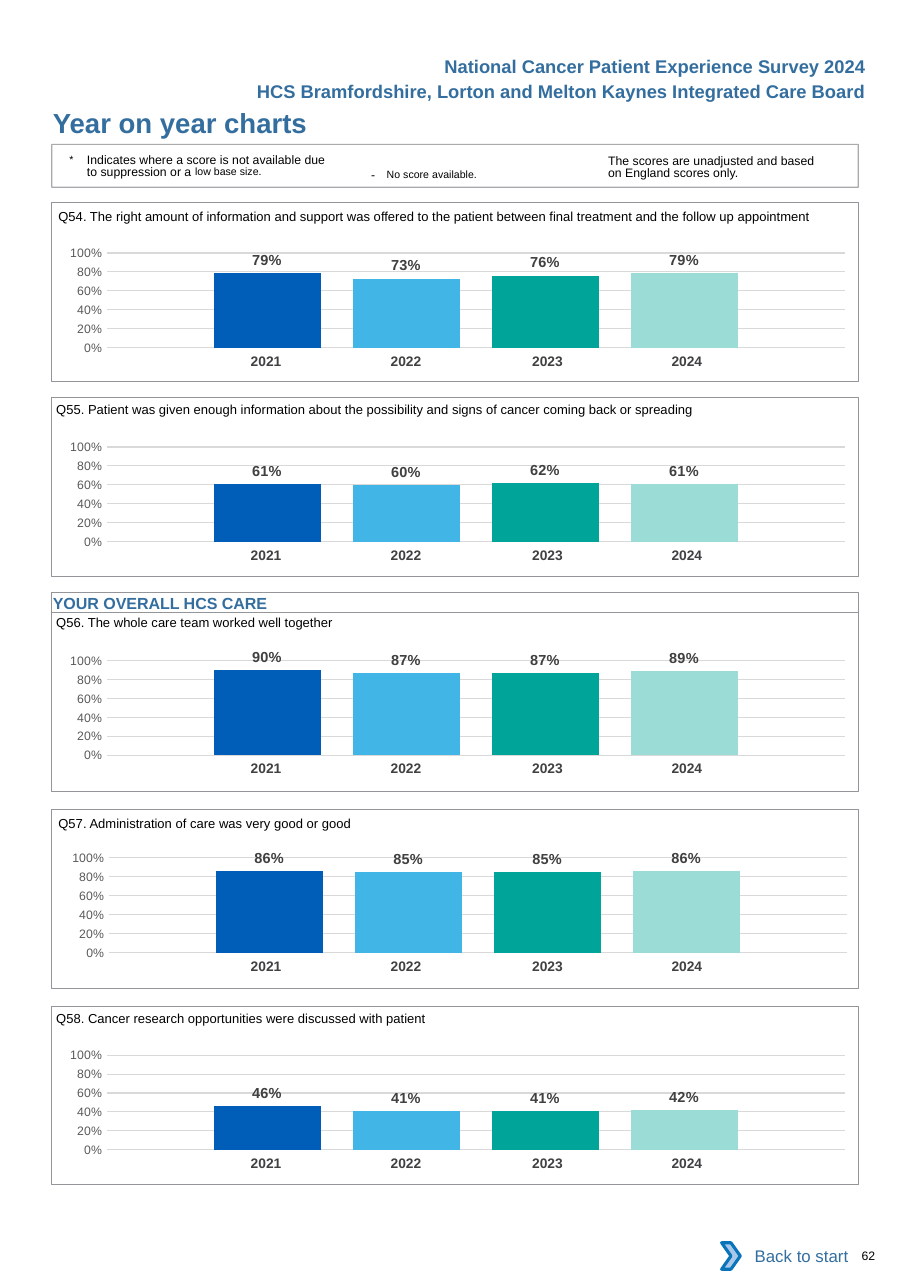
from lxml import etree
from pptx import Presentation
from pptx.chart.data import CategoryChartData
from pptx.dml.color import RGBColor
from pptx.enum.chart import XL_CHART_TYPE, XL_LABEL_POSITION, XL_TICK_MARK
from pptx.enum.shapes import MSO_SHAPE
from pptx.enum.text import MSO_ANCHOR, PP_ALIGN
from pptx.oxml import parse_xml
from pptx.oxml.ns import nsdecls, qn
from pptx.util import Pt

PX = 9144  # 100 px to the inch
COLUMNS = XL_CHART_TYPE.COLUMN_CLUSTERED
OUTSIDE_END = XL_LABEL_POSITION.OUTSIDE_END
NO_TICKS = XL_TICK_MARK.NONE
RECT, CHEVRON = MSO_SHAPE.RECTANGLE, MSO_SHAPE.CHEVRON
LEFT, CENTER, RIGHT = PP_ALIGN.LEFT, PP_ALIGN.CENTER, PP_ALIGN.RIGHT
TOP, MIDDLE = MSO_ANCHOR.TOP, MSO_ANCHOR.MIDDLE

FONT = "Arial"
COLORS = {
    "text": "000000", "heading": "336E9F", "frame": "939598", "white": "FFFFFF",
    "year": "414042", "axis": "595959", "grid": "D9D9D9", "label": "404040",
    "arrow": "A8C7E9", "arrow_line": "0A74BB",
    "2021": "005EB8", "2022": "41B6E6", "2023": "00A499", "2024": "9CDCD7",
}
YEARS = ["2021", "2022", "2023", "2024"]
YEAR_WIDTHS = [127, 127, 134, 127]
YEAR_RIGHT_INSETS = [0, 0, 4, 12]
PANEL_LEFT, PANEL_WIDTH, PANEL_HEIGHT = 47, 732, 162
PLOT_AREA = {"x": 0.079, "y": 0.145, "w": 0.915, "h": 0.666}
NO_GRID_STYLE = "{2D5ABB26-0587-4C30-8999-92F81FD0307C}"

# Question, scores by year, panel top, (text left, top), (chart left, top)
QUESTIONS = [
    ("Q54. The right amount of information and support was offered to the patient "
     "between final treatment and the follow up appointment",
     [0.79, 0.73, 0.76, 0.79], 184, (53, 189), (39, 211)),
    ("Q55. Patient was given enough information about the possibility and signs of "
     "cancer coming back or spreading",
     [0.61, 0.60, 0.62, 0.61], 361, (51, 364), (39, 387)),
    ("Q56. The whole care team worked well together",
     [0.90, 0.87, 0.87, 0.89], 556, (51, 558), (39, 581)),
    ("Q57. Administration of care was very good or good",
     [0.86, 0.85, 0.85, 0.86], 735, (53, 740), (41, 760)),
    ("Q58. Cancer research opportunities were discussed with patient",
     [0.46, 0.41, 0.41, 0.42], 913, (51, 917), (39, 939)),
]


def rgb(color):
    return RGBColor.from_string(COLORS[color])


def set_font(font, size, color="text", bold=False):
    font.name, font.size, font.bold = FONT, Pt(size), bold
    font.color.rgb = rgb(color)


def set_margins(target, left=0, top=0, right=0, bottom=0):
    target.margin_left, target.margin_top = left * PX, top * PX
    target.margin_right, target.margin_bottom = right * PX, bottom * PX


def write(shape, text, size, color="text", bold=False, align=LEFT, anchor=TOP):
    frame = shape.text_frame
    frame.word_wrap = True
    frame.vertical_anchor = anchor
    set_margins(frame)
    paragraph = frame.paragraphs[0]
    paragraph.text = text
    paragraph.alignment = align
    set_font(paragraph.font, size, color, bold)
    return paragraph


def add_text(slide, box, text, size, **style):
    left, top, width, height = (n * PX for n in box)
    return write(slide.shapes.add_textbox(left, top, width, height), text, size, **style)


def add_raised_run(paragraph, text, baseline):
    run = paragraph.add_run()
    run.text = text
    run.font.size = Pt(12)
    run.font._element.set("baseline", str(baseline * 1000))


def add_box(slide, kind, box, fill=None, line=None, width=0.5):
    shape = slide.shapes.add_shape(kind, *(n * PX for n in box))
    shape.shadow.inherit = False
    if fill:
        shape.fill.solid()
        shape.fill.fore_color.rgb = rgb(fill)
    else:
        shape.fill.background()
    if line:
        shape.line.color.rgb = rgb(line)
        shape.line.width = Pt(width)
    else:
        shape.line.fill.background()
    return shape


def add_score_chart(slide, left, top, scores):
    data = CategoryChartData(number_format="0%")
    data.categories = ["1"]
    for year, score in zip(YEARS, scores):
        data.add_series(year, [score])
    chart = slide.shapes.add_chart(
        COLUMNS, left * PX, top * PX, 732 * PX, 129 * PX, data).chart
    chart.has_legend = chart.has_title = False
    set_font(chart.font, 10)
    chart.font.name = "Calibri"
    chart.category_axis.visible = False

    scale = chart.value_axis
    scale.minimum_scale, scale.maximum_scale, scale.major_unit = 0, 1, 0.2
    scale.major_tick_mark = scale.minor_tick_mark = NO_TICKS
    scale.format.line.fill.background()
    scale.major_gridlines.format.line.color.rgb = rgb("grid")
    scale.major_gridlines.format.line.width = Pt(0.75)
    scale.tick_labels.number_format = "0%"
    scale.tick_labels.number_format_is_linked = False
    set_font(scale.tick_labels.font, 8, "axis")

    plot = chart.plots[0]
    plot.gap_width, plot.overlap, plot.vary_by_categories = 200, -30, False
    for year, bar in zip(YEARS, plot.series):
        bar.format.fill.solid()
        bar.format.fill.fore_color.rgb = rgb(year)
        labels = bar.data_labels
        labels.show_value = True
        labels.position = OUTSIDE_END
        labels.number_format = "0%"
        labels.number_format_is_linked = False
        set_font(labels.font, 9.5, "label", True)

    # Fixed inner plot area
    plot_area = chart._chartSpace.chart.plotArea
    for old in plot_area.findall(qn("c:layout")):
        plot_area.remove(old)
    layout = parse_xml(f"<c:layout {nsdecls('c')}><c:manualLayout/></c:layout>")
    settings = {"layoutTarget": "inner", "xMode": "edge", "yMode": "edge", **PLOT_AREA}
    for tag, value in settings.items():
        etree.SubElement(layout[0], qn(f"c:{tag}")).set("val", str(value))
    plot_area.insert(0, layout)


def add_year_row(slide, top):
    table = slide.shapes.add_table(
        1, len(YEARS), 173 * PX, top * PX, sum(YEAR_WIDTHS) * PX, 27 * PX).table
    table.first_row = table.horz_banding = False
    table._tbl.tblPr.find(qn("a:tableStyleId")).text = NO_GRID_STYLE
    for i, year in enumerate(YEARS):
        table.columns[i].width = YEAR_WIDTHS[i] * PX
        cell = table.cell(0, i)
        cell.fill.background()
        set_margins(cell, 10, 5, YEAR_RIGHT_INSETS[i], 5)
        paragraph = cell.text_frame.paragraphs[0]
        paragraph.text = year
        paragraph.alignment = CENTER
        set_font(paragraph.font, 9, "year", True)


def add_question(slide, question, scores, panel_top, text_at, chart_at):
    add_box(slide, RECT, (PANEL_LEFT, panel_top, PANEL_WIDTH, PANEL_HEIGHT), line="frame")
    add_score_chart(slide, *chart_at, scores)
    add_text(slide, (*text_at, 725, 15), question, 8.5)
    add_year_row(slide, chart_at[1] + 105)


def add_legend(slide):
    frame = add_box(slide, RECT, (PANEL_LEFT, 131, PANEL_WIDTH, 39), line="frame", width=0.75)
    line_color = frame.line._ln.find(".//" + qn("a:srgbClr"))
    etree.SubElement(line_color, qn("a:alpha")).set("val", "80000")

    suppressed = add_text(slide, (63, 141, 240, 26), "", 8)
    add_raised_run(suppressed, "*\t", 3)
    suppressed.add_run().text = "Indicates where a score is not available due to suppression or a "
    add_raised_run(suppressed, "low base size.", 7)
    suppressed._p.get_or_add_pPr().set("marL", str(16 * PX))
    suppressed._p.get_or_add_pPr().set("indent", str(-16 * PX))

    no_score = add_text(slide, (337, 146, 163, 19), "- ", 8)
    no_score.runs[0].font._element.set("spc", "260")
    add_raised_run(no_score, "No score available.", 3)

    unadjusted = add_text(slide, (552, 141, 195, 26),
                          "The scores are unadjusted and based on England scores only.", 8)
    for note in (suppressed, unadjusted):
        note.line_spacing = Pt(8.1)


def main():
    prs = Presentation()
    prs.slide_width, prs.slide_height = 826 * PX, 1169 * PX
    slide = prs.slides.add_slide(prs.slide_layouts[6])

    # Page heading
    heading = {"color": "heading", "bold": True}
    add_text(slide, (200, 50, 586, 20), "National Cancer Patient Experience Survey 2024", 12,
             align=RIGHT, **heading)
    add_text(slide, (200, 73, 586, 20),
             "HCS Bramfordshire, Lorton and Melton Kaynes Integrated Care Board", 12,
             align=RIGHT, **heading)
    add_text(slide, (48, 96, 450, 30), "Year on year charts", 18, **heading)
    add_legend(slide)

    # Questions and section heading
    for question in QUESTIONS:
        add_question(slide, *question)
    section = add_box(slide, RECT, (PANEL_LEFT, 538, PANEL_WIDTH, 18), line="frame")
    write(section, "YOUR OVERALL HCS CARE", 10.5, **heading)
    set_margins(section.text_frame, left=1, top=1)

    # Footer
    back = add_box(slide, RECT, (662, 1119, 118, 42), fill="white")
    write(back, "Back to start", 11, color="heading", align=RIGHT, anchor=MIDDLE)
    set_margins(back.text_frame, 10, 5, 10, 5)
    add_box(slide, CHEVRON, (655, 1128, 17, 24), fill="arrow", line="arrow_line", width=2)
    add_text(slide, (782, 1133, 41, 13), "62", 8)

    prs.save("out.pptx")


if __name__ == "__main__":
    main()
